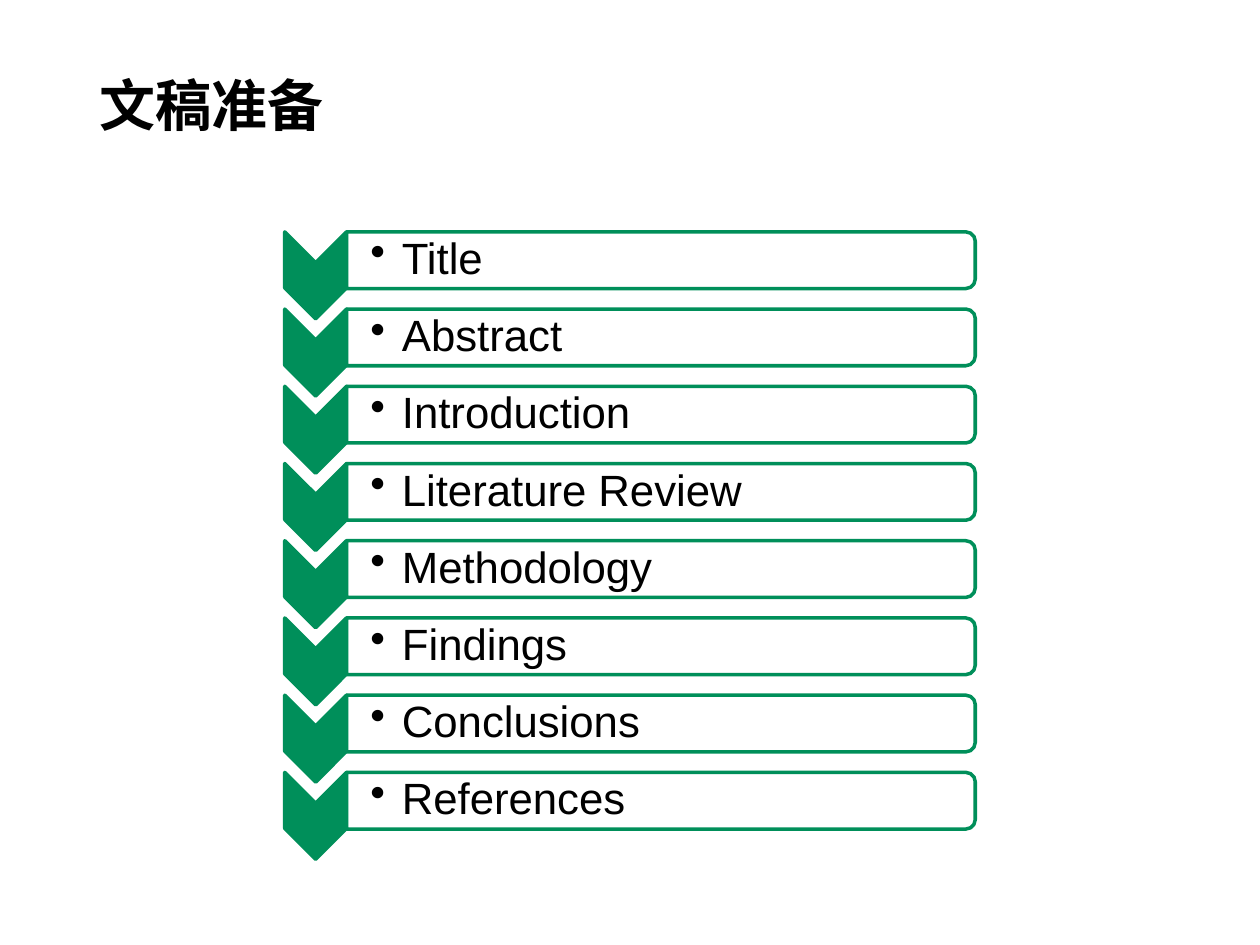
import lxml.etree
import pptx
import pptx.dml.color
import pptx.enum.shapes
import pptx.enum.text
import pptx.oxml.ns
import pptx.util

Inches = pptx.util.Inches
SHAPE = pptx.enum.shapes.MSO_SHAPE
ANCHOR = pptx.enum.text.MSO_ANCHOR

COLORS = {"green": "008F5A", "white": "FFFFFF", "black": "000000"}
SECTIONS = ["Title", "Abstract", "Introduction", "Literature Review",
            "Methodology", "Findings", "Conclusions", "References"]
FIRST_TOP, LAST_TOP = 1.94, 6.23
PITCH = (LAST_TOP - FIRST_TOP) / (len(SECTIONS) - 1)


def add_element(parent, tag, **attributes):
    return lxml.etree.SubElement(parent, pptx.oxml.ns.qn(tag), attributes)


def set_all(target, values):
    for name, value in values.items():
        setattr(target, name, value)


class SlideStyle:
    """Style of the deck and the slide being filled."""

    def __init__(self, page):
        self.page = page
        self.shapes = page.shapes

    def color(self, name):
        return pptx.dml.color.RGBColor.from_string(COLORS[name])

    def start_group(self):
        self.shapes = self.page.shapes.add_group_shape().shapes

    def end_group(self):
        self.shapes = self.page.shapes

    def turned_shape(self, kind, place, fill, opacity=100):
        """Preset shape turned a quarter clockwise, with a green outline."""
        shape = self.shapes.add_shape(kind, *map(Inches, place))
        shape.rotation = 90
        shape.shadow.inherit = False
        shape.fill.solid()
        shape.fill.fore_color.rgb = self.color(fill)
        if opacity < 100:
            fill_color = shape.fill._xPr.find(".//" + pptx.oxml.ns.qn("a:srgbClr"))
            add_element(fill_color, "a:alpha", val=str(opacity * 1000))
        shape.line.color.rgb = self.color("green")
        shape.line.width = pptx.util.Pt(2)

    def text(self, words, place, margins, anchor, font, bullet=False):
        box = self.shapes.add_textbox(*map(Inches, place))
        frame = box.text_frame
        sides = ("margin_left", "margin_top", "margin_right", "margin_bottom")
        set_all(frame, dict(zip(sides, map(Inches, margins))))
        set_all(frame, {"word_wrap": True, "vertical_anchor": anchor})
        para = frame.paragraphs[0]
        if bullet:
            self.bullet(para)
        span = para.add_run()
        span.text = words
        set_all(span.font, font)
        span.font.color.rgb = self.color("black")
        add_element(span.font._element, "a:ea", typeface=font["name"])

    def bullet(self, para):
        properties = para._p.get_or_add_pPr()
        indent = Inches(0.25)
        properties.set("marL", str(indent))
        properties.set("indent", str(-indent))
        spacing = add_element(properties, "a:spcAft")
        add_element(spacing, "a:spcPct", val="15000")
        add_element(properties, "a:buChar", char="•")
        set_all(para, {"level": 1, "line_spacing": 0.9})


def main():
    deck = pptx.Presentation()
    set_all(deck, {"slide_width": Inches(10), "slide_height": Inches(7.5)})
    style = SlideStyle(deck.slides.add_slide(deck.slide_layouts[6]))

    # Chevron list of manuscript sections
    section_font = {"name": "Arial", "size": pptx.util.Pt(25)}
    style.start_group()
    for index, section in enumerate(SECTIONS):
        top = FIRST_TOP + index * PITCH
        style.turned_shape(SHAPE.CHEVRON, (2.16, top, 0.69, 0.49), "green")
        style.turned_shape(SHAPE.ROUND_2_SAME_RECTANGLE,
                           (5.02, top - 2.37, 0.45, 4.99), "white", opacity=90)
        style.text(section, (2.75, top - 0.08, 4.97, 0.41),
                   (0.19, 0.02, 0.02, 0.02), ANCHOR.MIDDLE, section_font, bullet=True)
    style.end_group()

    # Slide title
    title_font = {"name": "Noto Sans CJK SC", "size": pptx.util.Pt(32), "bold": True}
    style.text("文稿准备", (0.79, 0.02, 8.07, 1.07), (0, 0, 0, 0),
               ANCHOR.BOTTOM, title_font)

    deck.save("out.pptx")


if __name__ == "__main__":
    main()
